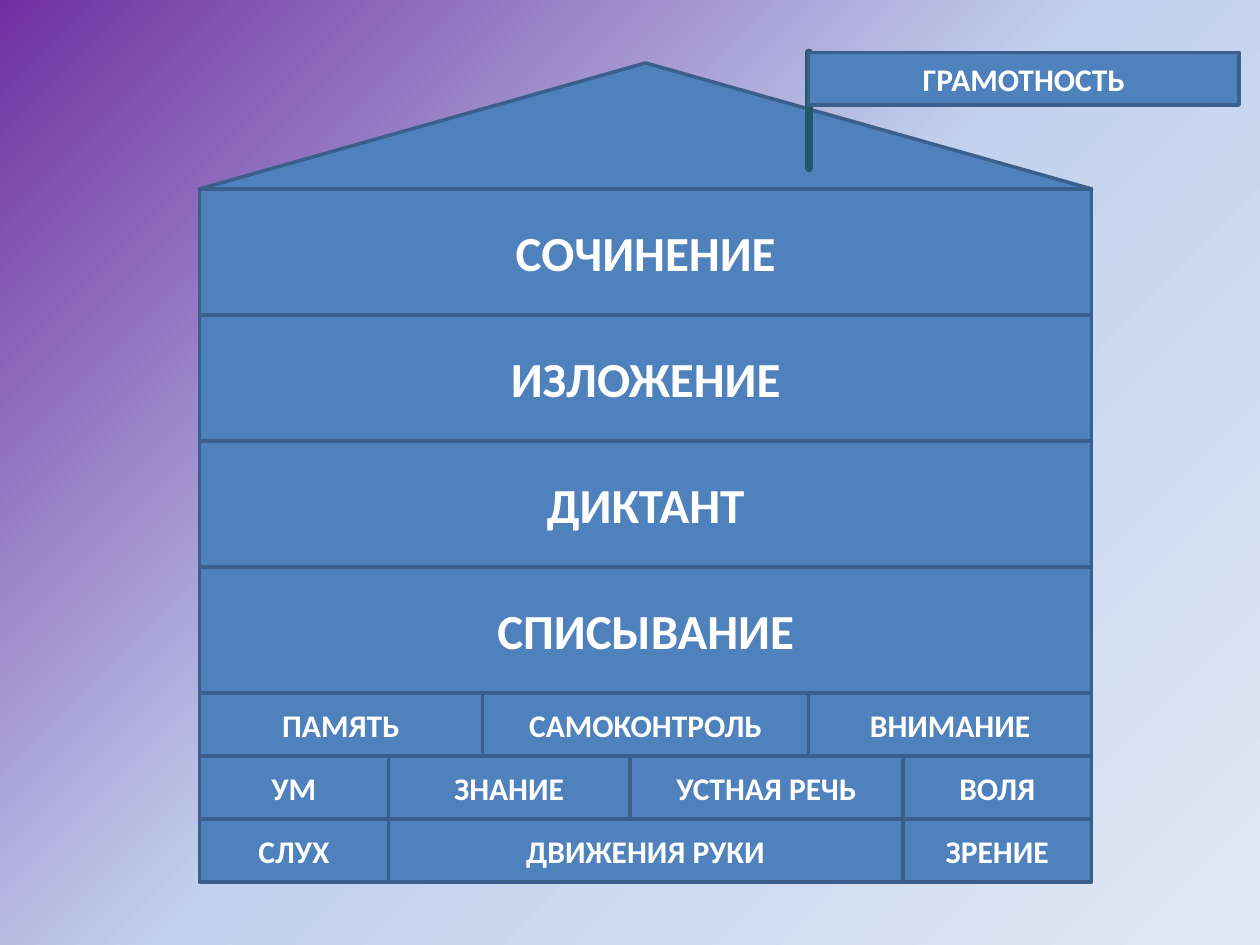
"""Build a slide with a house of writing skills under a literacy flag."""
from copy import deepcopy

from lxml.etree import SubElement
from pptx import Presentation
from pptx.dml.color import RGBColor
from pptx.enum.shapes import MSO_CONNECTOR, MSO_SHAPE
from pptx.enum.text import MSO_ANCHOR, PP_ALIGN
from pptx.oxml.ns import qn
from pptx.util import Cm, Pt


def paint(color, value):
    color.rgb = RGBColor.from_string(value)


def add_block(page, kind, left, top, width, height, text="", size=18):
    box = page.shapes.add_shape(kind, Cm(left), Cm(top), Cm(width), Cm(height))
    box.shadow.inherit = False
    box.fill.solid()
    paint(box.fill.fore_color, "4F81BD")
    paint(box.line.color, "3A5F8C")
    box.line.width = Pt(2)
    if text:
        box.text_frame.word_wrap = True
        box.text_frame.vertical_anchor = MSO_ANCHOR.MIDDLE
        para = box.text_frame.paragraphs[0]
        para.alignment = PP_ALIGN.CENTER
        span = para.add_run()
        span.text = text
        span.font.name = "Calibri"
        span.font.size = Pt(size)
        span.font.bold = True
        paint(span.font.color, "FFFFFF")


deck = Presentation()
deck.slide_width = Cm(25.4)
deck.slide_height = Cm(19.05)
page = deck.slides.add_slide(deck.slide_layouts[6])

background = page.background.fill
background.gradient()
background.gradient_angle = 315
stop_list = page.element.find(".//" + qn("a:gsLst"))
stop_list.append(deepcopy(stop_list[-1]))
stops = [(0, "7030A0"), (0.5, "C2D1ED"), (1, "E1E8F5")]
for stop, (position, value) in zip(background.gradient_stops, stops):
    stop.position = position
    paint(stop.color, value)

house_left, house_width = 4.02, 17.99
floor_height, course_height = 2.54, 1.27
roof_top = 1.27
top = roof_top + floor_height

for floor in ["СОЧИНЕНИЕ", "ИЗЛОЖЕНИЕ", "ДИКТАНТ", "СПИСЫВАНИЕ"]:
    add_block(page, MSO_SHAPE.RECTANGLE, house_left, top, house_width, floor_height, floor, 28)
    top += floor_height

foundation = [
    [("ПАМЯТЬ", 5.71), ("САМОКОНТРОЛЬ", 6.57), ("ВНИМАНИЕ", 5.71)],
    [("УМ", 3.81), ("ЗНАНИЕ", 4.87), ("УСТНАЯ РЕЧЬ", 5.5), ("ВОЛЯ", 3.81)],
    [("СЛУХ", 3.81), ("ДВИЖЕНИЯ РУКИ", 10.37), ("ЗРЕНИЕ", 3.81)],
]
for course in foundation:
    left = house_left
    for brick, width in course:
        add_block(page, MSO_SHAPE.RECTANGLE, left, top, width, course_height, brick)
        left += width
    top += course_height

add_block(page, MSO_SHAPE.ISOSCELES_TRIANGLE, house_left, roof_top, house_width, floor_height)

pole_left, pole_top = 16.3, 1.06
pole = page.shapes.add_connector(
    MSO_CONNECTOR.STRAIGHT, Cm(pole_left), Cm(pole_top), Cm(pole_left), Cm(3.39))
paint(pole.line.color, "215968")
pole.line.width = Pt(4.5)
pole_properties = pole.element.find(qn("p:spPr"))
pole_properties.find(qn("a:ln")).set("cap", "rnd")
SubElement(pole_properties, qn("a:effectLst"))
add_block(page, MSO_SHAPE.RECTANGLE, pole_left, pole_top, 8.68, 1.06, "ГРАМОТНОСТЬ")

deck.save("out.pptx")
